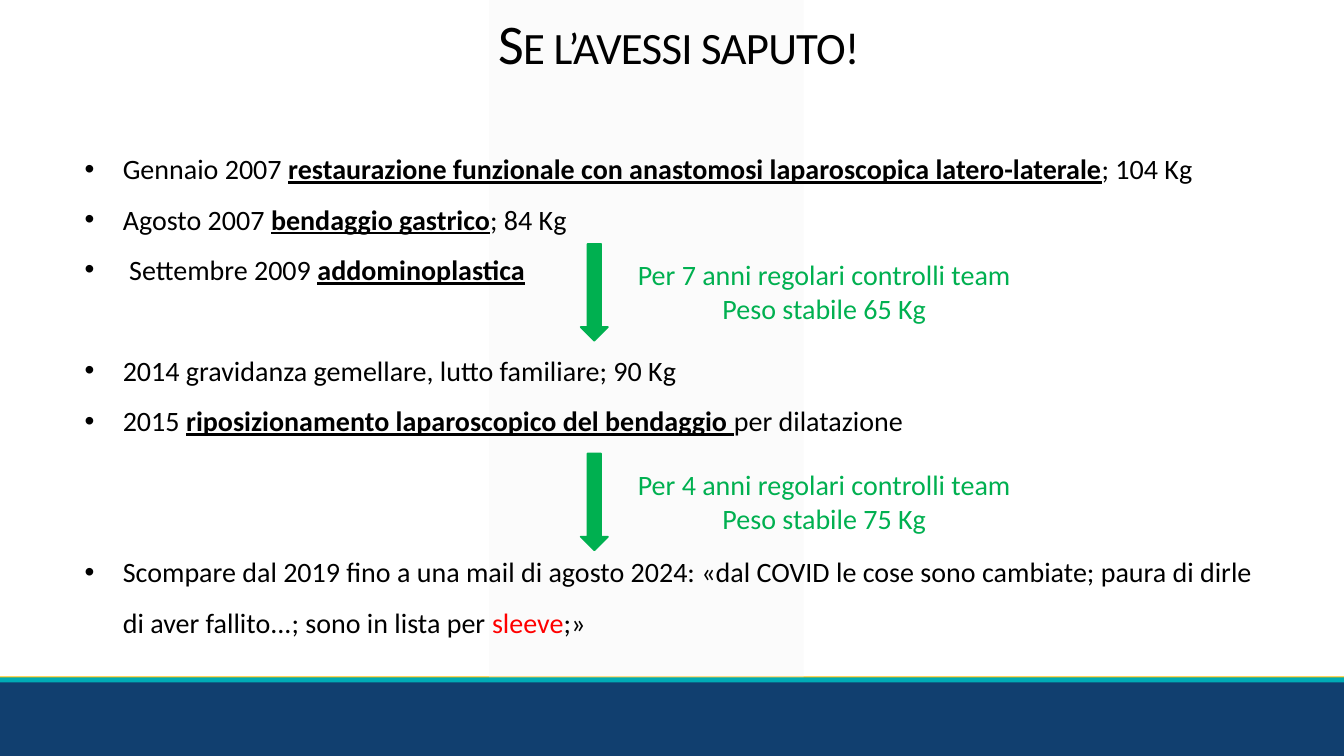
"""Build the patient timeline slide with its two follow-up arrows."""
import pptx
import pptx.util
import pptx.dml.color
import pptx.enum.shapes
import pptx.enum.text
import lxml.etree
from pptx.oxml.ns import qn

Inches = pptx.util.Inches
Pt = pptx.util.Pt
SHAPE = pptx.enum.shapes.MSO_SHAPE
ALIGN = pptx.enum.text.PP_ALIGN
ANCHOR = pptx.enum.text.MSO_ANCHOR

FONT = "Calibri"
BLACK, GREEN, RED = "000000", "00B050", "FF0000"
WIDTH, HEIGHT = 13.33, 7.5
LINE_PITCH = 36
KEY = {"bold": True, "underline": True}

TITLE = "Se l’avessi saputo!"

# (blank lines left above, [(text, format), ...])
EVENTS = [
    (0, [("Gennaio 2007 ", {}),
         ("restaurazione funzionale con anastomosi laparoscopica latero-laterale", KEY),
         ("; 104 Kg", {})]),
    (0, [("Agosto 2007 ", {}), ("bendaggio gastrico", KEY), ("; 84 Kg", {})]),
    (0, [(" Settembre 2009 ", {}), ("addominoplastica", KEY)]),
    (1, [("2014 gravidanza gemellare, lutto familiare; 90 Kg", {})]),
    (0, [("2015 ", {}), ("riposizionamento laparoscopico del bendaggio ", KEY),
         ("per dilatazione", {})]),
    (2, [("Scompare dal 2019 fino a una mail di agosto 2024: «dal COVID le cose sono "
          "cambiate; paura di dirle di aver fallito...; sono in lista per ", {}),
         ("sleeve", {"color": RED}), (";»", {})]),
]

FOLLOW_UPS = [
    (2.42, ["Per 7 anni regolari controlli team", "Peso stabile 65 Kg"]),
    (4.5, ["Per 4 anni regolari controlli team", "Peso stabile 75 Kg"]),
]

BACKDROP = [
    (SHAPE.RECTANGLE, (0, 6.71, WIDTH, 0.05), "FFC000"),
    (SHAPE.RECTANGLE, (0, 6.75, WIDTH, 0.75), "113F6F"),
    (SHAPE.PARALLELOGRAM, (4.85, -0.14, 3.12, 6.89), "F2F2F2"),
    (SHAPE.RECTANGLE, (0, 6.72, WIDTH, 0.05), "00ACB6"),
]


def rgb(color):
    return pptx.dml.color.RGBColor.from_string(color)


def add_span(para, text, size=20, color=BLACK, bold=False, underline=False):
    span = para.add_run()
    span.text = text
    span.font.name = FONT
    span.font.size = Pt(size)
    span.font.bold = bold
    span.font.underline = underline
    span.font.color.rgb = rgb(color)
    return span


def add_block(page, kind, place, color, outline=None):
    block = page.shapes.add_shape(kind, *map(Inches, place))
    block.shadow.inherit = False
    block.fill.solid()
    block.fill.fore_color.rgb = rgb(color)
    if outline:
        block.line.color.rgb = rgb(color)
        block.line.width = Pt(outline)
    else:
        block.line.fill.background()
    return block


def add_box(page, place):
    box = page.shapes.add_textbox(*map(Inches, place))
    box.text_frame.word_wrap = True
    return box.text_frame


def paragraphs(frame, items):
    for index, item in enumerate(items):
        yield (frame.add_paragraph() if index else frame.paragraphs[0]), item


def add_bullet(para):
    properties = para._p.get_or_add_pPr()
    properties.set("marL", str(Inches(0.38)))
    properties.set("indent", str(Inches(-0.38)))
    lxml.etree.SubElement(properties, qn("a:buFont")).set("typeface", "Arial")
    lxml.etree.SubElement(properties, qn("a:buChar")).set("char", "•")


def add_backdrop(page):
    for kind, place, color in BACKDROP:
        block = add_block(page, kind, place, color)
        if kind == SHAPE.PARALLELOGRAM:
            block.adjustments[0] = 0
            tint = block._element.spPr.find(qn("a:solidFill"))[0]
            lxml.etree.SubElement(tint, qn("a:alpha")).set("val", "30000")


def add_events(page):
    frame = add_box(page, (0.74, 1.29, 11.86, 5.6))
    for para, (gap, spans) in paragraphs(frame, EVENTS):
        add_bullet(para)
        para.line_spacing = 1.5
        if gap:
            para.space_before = Pt(gap * LINE_PITCH)
        for text, style in spans:
            add_span(para, text, **style)


def place_title(page):
    title = page.shapes.title
    title.left, title.top, title.width, title.height = map(Inches, (1.02, 0.11, 11.29, 0.71))
    frame = title.text_frame
    frame.vertical_anchor = ANCHOR.MIDDLE
    frame.auto_size = pptx.enum.text.MSO_AUTO_SIZE.NONE
    para = frame.paragraphs[0]
    para.alignment = ALIGN.CENTER
    para.line_spacing = 0.9
    properties = add_span(para, TITLE, size=40).font._element
    properties.set("cap", "small")
    properties.set("spc", "-50")
    page.shapes._spTree.append(title._element)


def add_follow_up(page, top, lines):
    add_block(page, SHAPE.DOWN_ARROW, (5.76, top, 0.27, 0.96), GREEN, outline=1.25)
    frame = add_box(page, (6.03, top + 0.09, 4.29, 0.77))
    for para, text in paragraphs(frame, lines):
        para.alignment = ALIGN.CENTER
        add_span(para, text, color=GREEN)


def main():
    deck = pptx.Presentation()
    deck.slide_width, deck.slide_height = Inches(WIDTH), Inches(HEIGHT)
    page = deck.slides.add_slide(deck.slide_layouts[5])
    add_backdrop(page)
    add_events(page)
    place_title(page)
    for top, lines in FOLLOW_UPS:
        add_follow_up(page, top, lines)
    deck.save("out.pptx")


if __name__ == "__main__":
    main()
